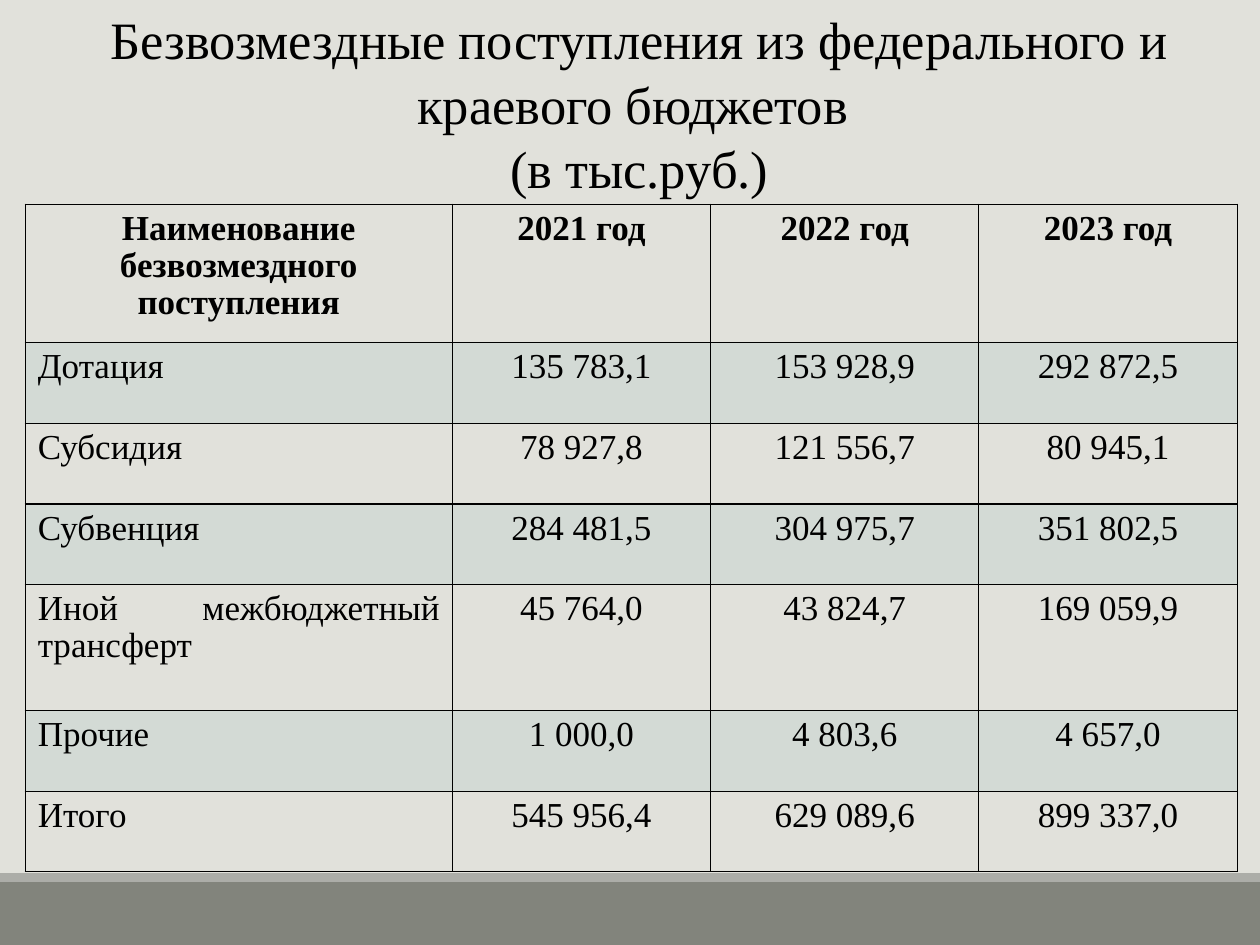
from lxml import etree
from pptx import Presentation
from pptx.dml.color import RGBColor
from pptx.enum.shapes import MSO_SHAPE as Shape
from pptx.enum.text import MSO_ANCHOR as Anchor, PP_ALIGN as Align
from pptx.oxml.ns import qn
from pptx.util import Inches, Pt

FONT = "Times New Roman"
BLACK, PAPER, BAND = "000000", "E1E1DB", "9DBFBE"
TITLE = "Безвозмездные поступления из федерального и краевого бюджетов \n(в тыс.руб.)"
COLUMN_WIDTHS = (3.39, 2.05, 2.13, 2.05)
HEADER_HEIGHT, ROW_HEIGHT, TALL_ROW_HEIGHT = 1.1, 0.64, 1.0
ROWS = (
    ("Наименование безвозмездного поступления", "2021 год", "2022 год", "2023 год"),
    ("Дотация", "135 783,1", "153 928,9", "292 872,5"),
    ("Субсидия", "78 927,8", "121 556,7", "80 945,1"),
    ("Субвенция", "284 481,5", "304 975,7", "351 802,5"),
    ("Иной межбюджетный трансферт", "45 764,0", "43 824,7", "169 059,9"),
    ("Прочие", "1 000,0", "4 803,6", "4 657,0"),
    ("Итого", "545 956,4", "629 089,6", "899 337,0"),
)
TALL_ROW = 4


def paint(fill, color):
    fill.solid()
    fill.fore_color.rgb = RGBColor.from_string(color)


def write(frame, text, size=20, bold=False, align=Align.CENTER, spacing=0.96):
    """Put one formatted paragraph into a text frame; a newline breaks the line."""
    frame.word_wrap = True
    para = frame.paragraphs[0]
    para.text = text
    para.alignment = align
    para.line_spacing = spacing
    for span in para.runs:
        span.font.name = FONT
        span.font.size = Pt(size)
        span.font.bold = bold
        span.font.color.rgb = RGBColor.from_string(BLACK)


def add_bar(slide, top, height, width, color):
    bar = slide.shapes.add_shape(Shape.RECTANGLE, 0, Inches(top), width, Inches(height))
    bar.shadow.inherit = False
    paint(bar.fill, color)
    bar.line.fill.background()


def add_title(slide):
    box = slide.shapes.add_textbox(Inches(0.51), 0, Inches(9.13), Inches(1.62))
    box.text_frame.vertical_anchor = Anchor.MIDDLE
    write(box.text_frame, TITLE, size=30, spacing=1.03)


def outline(cell):
    """Draw the four cell borders, which must precede the fill in the XML."""
    props = cell._tc.get_or_add_tcPr()
    for place, side in enumerate(("a:lnL", "a:lnR", "a:lnT", "a:lnB")):
        line = etree.Element(qn(side), w=str(Pt(0.75)))
        solid = etree.SubElement(line, qn("a:solidFill"))
        etree.SubElement(solid, qn("a:srgbClr"), val=BLACK)
        props.insert(place, line)


def fill_cell(cell, banded):
    if not banded:
        cell.fill.background()
        return
    paint(cell.fill, BAND)
    color = cell._tc.tcPr.find(".//" + qn("a:srgbClr"))
    etree.SubElement(color, qn("a:alpha"), val="20000")


def add_budget_table(slide):
    heights = [ROW_HEIGHT] * len(ROWS)
    heights[0], heights[TALL_ROW] = HEADER_HEIGHT, TALL_ROW_HEIGHT
    table = slide.shapes.add_table(
        len(ROWS), len(COLUMN_WIDTHS), Inches(0.2), Inches(1.62),
        Inches(sum(COLUMN_WIDTHS)), Inches(sum(heights))).table
    for column, width in zip(table.columns, COLUMN_WIDTHS):
        column.width = Inches(width)
    for row, height in zip(table.rows, heights):
        row.height = Inches(height)
    for i, values in enumerate(ROWS):
        for j, value in enumerate(values):
            cell = table.cell(i, j)
            is_name = i > 0 and j == 0
            write(cell.text_frame, value, bold=i == 0,
                  align=Align.JUSTIFY if is_name else Align.CENTER)
            fill_cell(cell, banded=i % 2 == 1)
            outline(cell)


def main():
    deck = Presentation()
    deck.slide_width, deck.slide_height = Inches(10), Inches(7.5)
    slide = deck.slides.add_slide(deck.slide_layouts[6])
    paint(slide.background.fill, PAPER)
    add_bar(slide, 7, 0.5, deck.slide_width, "82847C")
    add_bar(slide, 6.93, 0.07, deck.slide_width, "ACADA8")
    add_title(slide)
    add_budget_table(slide)
    deck.save("out.pptx")


if __name__ == "__main__":
    main()
